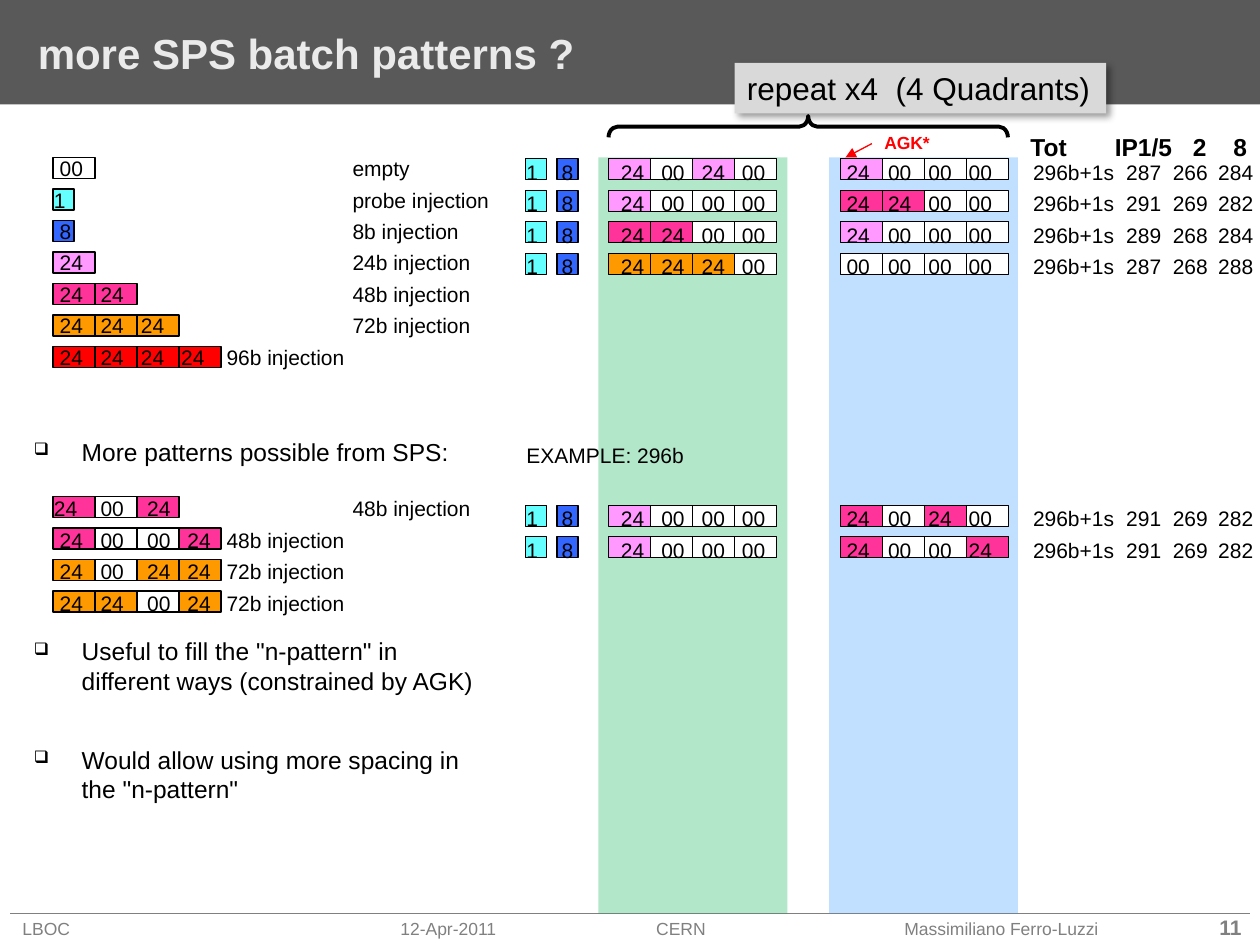
"""Build the slide on SPS batch patterns and their injection schemes."""
from lxml import etree
from pptx import Presentation
from pptx.dml.color import RGBColor
from pptx.enum.shapes import MSO_CONNECTOR as Connector, MSO_SHAPE as Shape
from pptx.enum.text import MSO_ANCHOR as Anchor, PP_ALIGN as Align
from pptx.oxml.ns import qn
from pptx.util import Inches, Pt

COLORS = {
    "black": "000000", "white": "FFFFFF", "header": "595959", "title": "EAEAEA",
    "gray": "808080", "callout": "D9D9D9", "green": "00B050", "sky": "3399FF",
    "cyan": "66FFFF", "blue": "3366FF", "pink": "FF99FF", "magenta": "FF3399",
    "orange": "FF9900", "red": "FF0000",
}
CELL = 1 / 3
CELL_HEIGHT = 1 / 6
ROW_PITCH = 0.25
TIGHT = {"size": 12, "line_spacing": 0.83, "before": 6}

LEGEND = [
    (" 00", "white", "empty"),
    ("1", "cyan", "probe injection"),
    (" 8", "blue", "8b injection"),
    (" 24", "pink", "24b injection"),
    (" 24 24", "magenta", "48b injection"),
    (" 24 24 24", "orange", "72b injection"),
    (" 24 24 24 24", "red", "96b injection"),
]
EXTRA_PATTERNS = [
    ("24 00 24", "magenta", "48b injection"),
    (" 24 00 00 24", "magenta", "48b injection"),
    (" 24 00 24 24", "orange", "72b injection"),
    (" 24 24 00 24", "orange", "72b injection"),
]
SCHEMES = [
    (0, "24 00 24 00", "pink", "24 00 00 00", "pink", "287 266 284"),
    (1, "24 00 00 00", "pink", "24 24 00 00", "magenta", "291 269 282"),
    (2, "24 24 00 00", "magenta", "24 00 00 00", "pink", "289 268 284"),
    (3, "24 24 24 00", "orange", "00 00 00 00", "white", "287 268 288"),
    (11, "24 00 00 00", "pink", "24 00 24 00", "magenta", "291 269 282"),
    (12, "24 00 00 00", "pink", "24 00 00 24", "magenta", "291 269 282"),
]
SCHEME_STOPS = [0.28, 0.75, 1.07, 1.39, 1.71, 2.54, 2.87, 3.19, 3.51,
                4.02, 4.76, 5.13, 5.49]


def rgb(name):
    return RGBColor.from_string(COLORS[name])


def child(parent, tag, **attributes):
    return etree.SubElement(parent, qn(tag), {k: str(v) for k, v in attributes.items()})


def add_text(paragraph, text, size=12, color="black", bold=False, before=0,
             line_spacing=None, stops=(), bullet=None):
    paragraph.alignment = Align.LEFT
    paragraph.space_before = Pt(before)
    if line_spacing:
        paragraph.line_spacing = line_spacing
    run = paragraph.add_run()
    run.text = text
    run.font.name, run.font.size, run.font.bold = "Arial", Pt(size), bold
    run.font.color.rgb = rgb(color)
    properties = paragraph._p.get_or_add_pPr()
    if bullet:
        properties.set("marL", str(Inches(0.38)))
        properties.set("indent", str(-Inches(0.38)))
        child(properties, "a:buSzPct", val=70000)
        child(properties, "a:buChar", char=bullet)
    if stops:
        tabs = child(properties, "a:tabLst")
        for stop in stops:
            child(tabs, "a:tab", pos=Inches(stop), algn="l")
    return run


class Board:
    """Holds the slide and draws each kind of element on it."""

    def __init__(self, slide):
        self.shapes = slide.shapes

    def box(self, left, top, width, height, fill=None, line=None, weight=0.75,
            kind=Shape.RECTANGLE, alpha=None, shapes=None):
        shape = (shapes or self.shapes).add_shape(
            kind, Inches(left), Inches(top), Inches(width), Inches(height))
        shape.shadow.inherit = False
        if fill:
            shape.fill.solid()
            shape.fill.fore_color.rgb = rgb(fill)
        else:
            shape.fill.background()
        if alpha:
            color = shape._element.spPr.find(qn("a:solidFill"))[0]
            child(color, "a:alpha", val=alpha * 1000)
        if line:
            shape.line.color.rgb = rgb(line)
            shape.line.width = Pt(weight)
        else:
            shape.line.fill.background()
        return shape

    def text(self, left, top, width, height, paragraphs, wrap=True, **common):
        frame = self.shapes.add_textbox(
            Inches(left), Inches(top), Inches(width), Inches(height)).text_frame
        frame.word_wrap = wrap
        for index, (words, options) in enumerate(paragraphs):
            paragraph = frame.add_paragraph() if index else frame.paragraphs[0]
            add_text(paragraph, words, **{**common, **options})
        return frame

    def line(self, start, end, color, weight, arrow=False):
        connector = self.shapes.add_connector(
            Connector.STRAIGHT, *(Inches(value) for value in (*start, *end)))
        connector.line.color.rgb = rgb(color)
        connector.line.width = Pt(weight)
        if arrow:
            child(connector.line._get_or_add_ln(), "a:tailEnd", type="triangle")
        child(connector._element.spPr, "a:effectLst")

    def batch(self, left, top, codes, color, shapes=None):
        for index, code in enumerate(codes.split()):
            width = CELL if len(code) == 2 else CELL / 2
            self.box(left + index * CELL, top, width, CELL_HEIGHT,
                     "white" if code == "00" else color, "black", shapes=shapes)

    def patterns(self, top, text_top, text_height, rows, cell_stops):
        group = self.shapes.add_group_shape().shapes
        paragraphs = []
        for index, (codes, color, label) in enumerate(rows):
            self.batch(0.42, top + index * ROW_PITCH, codes, color, group)
            count = len(codes.split())
            stops = [*cell_stops[:count - 1], 1.37 if count == 4 else 2.37]
            cells = codes.rstrip().replace(" ", "\t")
            lead = " " if codes.startswith(" ") else ""
            words = f"{lead}{cells.lstrip()}\t{label}"
            paragraphs.append((words, {"stops": stops}))
        self.text(0.33, text_top, 4.17, text_height, paragraphs, **TIGHT)

    def schemes(self):
        group = self.shapes.add_group_shape().shapes
        paragraphs = []
        for row, first, first_color, second, second_color, collisions in SCHEMES:
            top = 1.26 + row * ROW_PITCH
            self.batch(4.17, top, "1", "cyan", group)
            self.batch(4.42, top, "8", "blue", group)
            self.batch(4.83, top, first, first_color, group)
            self.batch(6.67, top, second, second_color, group)
            words = f"1 8 {first} {second} 296b+1s {collisions}".replace(" ", "\t")
            paragraphs.append((words, {"stops": SCHEME_STOPS}))
        paragraphs[4][1]["before"] = 24
        paragraphs.insert(4, ("EXAMPLE: 296b", {"before": 96}))
        self.text(4.08, 1.25, 6.25, 6.03, paragraphs, **TIGHT)


def main():
    deck = Presentation()
    deck.slide_width, deck.slide_height = Inches(10), Inches(7.5)
    board = Board(deck.slides.add_slide(deck.slide_layouts[6]))

    board.line((0.08, 7.25), (9.92, 7.25), "gray", 1)
    footer = board.text(
        0.08, 7.25, 9.92, 0.22,
        [("LBOC\t12-Apr-2011\tCERN\tMassimiliano Ferro-Luzzi\t",
          {"stops": [3, 5.03, 7, 9.5]})], size=10, color="gray")
    footer.margin_top = footer.margin_bottom = Inches(0.01)
    add_text(footer.paragraphs[0], "11", size=12, color="gray", bold=True)

    board.box(4.75, 1.25, 1.5, 6, "green", alpha=30)
    board.box(6.58, 1.25, 1.5, 6, "sky", alpha=30)

    header = board.box(0, 0, 10, 0.83, "header").text_frame
    header.margin_left = header.margin_right = Inches(0.3)
    header.vertical_anchor = Anchor.MIDDLE
    add_text(header.paragraphs[0], "more SPS batch patterns ?",
             size=24, color="title", bold=True)

    board.text(0.17, 3.42, 3.75, 2.33, [
        ("More patterns possible from SPS:", {"before": 6}),
        ('Useful to fill the "n-pattern" in different ways (constrained by AGK)',
         {"before": 97}),
        ('Would allow using more spacing in the "n-pattern"', {"before": 28.5}),
    ], size=14, bullet="❑")

    board.patterns(1.25, 1.22, 1.95, LEGEND, [0.37, 0.69, 1.01])

    brace = board.box(6.33, -0.58, 0.17, 3.17, line="black", weight=2.25,
                      kind=Shape.RIGHT_BRACE)
    brace.rotation = 270
    brace.adjustments[0], brace.adjustments[1] = 0.42, 0.5

    callout = board.box(5.83, 0.5, 2.95, 0.4, "callout")
    shadow = child(callout._element.spPr.find(qn("a:effectLst")), "a:outerShdw",
                   blurRad=Pt(4), dist=Pt(3), dir=45 * 60000)
    child(child(shadow, "a:srgbClr", val=COLORS["black"]), "a:alpha", val=40000)
    add_text(callout.text_frame.paragraphs[0], "repeat x4\t(4 Quadrants)",
             size=18, stops=[1.18])

    board.line((6.92, 1.14), (6.71, 1.25), "red", 0.75, arrow=True)
    board.text(6.92, 1, 0.57, 0.27, [("AGK*", {})], wrap=False,
               size=10, color="red", bold=True)
    board.text(8.08, 1, 1.93, 0.34, [("Tot\tIP1/5\t2\t8", {})],
               size=14, bold=True, stops=[0.67, 1.29, 1.61])

    board.patterns(3.94, 3.92, 1.25, EXTRA_PATTERNS, [0.37, 0.74, 1.06])
    board.schemes()
    deck.save("out.pptx")


if __name__ == "__main__":
    main()
